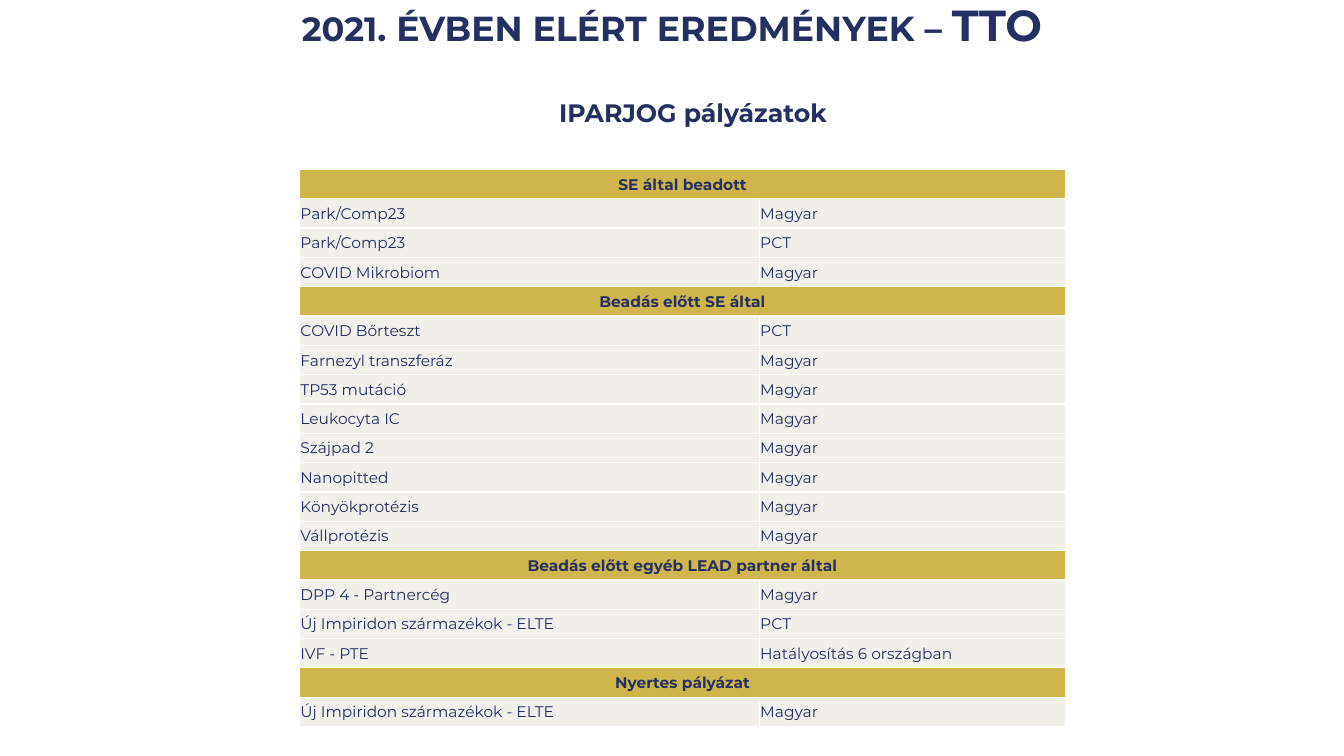
from lxml import etree
from pptx import Presentation
from pptx.dml.color import RGBColor
from pptx.enum.text import MSO_ANCHOR, MSO_AUTO_SIZE, PP_ALIGN
from pptx.oxml.ns import qn
from pptx.util import Inches, Pt

CENTER = PP_ALIGN.CENTER
MIDDLE = MSO_ANCHOR.MIDDLE
NO_AUTOFIT = MSO_AUTO_SIZE.NONE
GROW = MSO_AUTO_SIZE.SHAPE_TO_FIT_TEXT

NAVY = RGBColor(0x24, 0x2F, 0x62)
GOLD = RGBColor(0xCF, 0xB6, 0x4C)
CREAM = RGBColor(0xF2, 0xF0, 0xEB)
WHITE = RGBColor(0xFF, 0xFF, 0xFF)
FONT = "Montserrat"
TITLE_ONLY = 5

SECTIONS = [
    ("SE által beadott", [
        ("Park/Comp23", "Magyar"),
        ("Park/Comp23", "PCT"),
        ("COVID Mikrobiom", "Magyar"),
    ]),
    ("Beadás előtt SE által", [
        ("COVID Bőrteszt", "PCT"),
        ("Farnezyl transzferáz", "Magyar"),
        ("TP53 mutáció", "Magyar"),
        ("Leukocyta IC", "Magyar"),
        ("Szájpad 2", "Magyar"),
        ("Nanopitted", "Magyar"),
        ("Könyökprotézis", "Magyar"),
        ("Vállprotézis", "Magyar"),
    ]),
    ("Beadás előtt egyéb LEAD partner által", [
        ("DPP 4 - Partnercég", "Magyar"),
        ("Új Impiridon származékok - ELTE", "PCT"),
        ("IVF - PTE", "Hatályosítás 6 országban"),
    ]),
    ("Nyertes pályázat", [
        ("Új Impiridon származékok - ELTE", "Magyar"),
    ]),
]


def style_run(run, size, bold):
    run.font.name = FONT
    run.font.size = Pt(size)
    run.font.bold = bold
    run.font.color.rgb = NAVY


def add_title(slide, left, top, width, height):
    title = slide.shapes.title
    title.left, title.top = Inches(left), Inches(top)
    title.width, title.height = Inches(width), Inches(height)
    frame = title.text_frame
    frame.auto_size = NO_AUTOFIT
    frame.vertical_anchor = MIDDLE
    heading = frame.paragraphs[0]
    heading.alignment = CENTER
    heading.line_spacing = 0.9
    for wording, size in (("2021", 30), (". évben elért eredmények – TTO", 31)):
        run = heading.add_run()
        run.text = wording
        style_run(run, size, True)
        run.font._element.set("cap", "small")


def add_subtitle(slide, left, top, width, height):
    subtitle = slide.shapes.add_textbox(
        Inches(left), Inches(top), Inches(width), Inches(height))
    frame = subtitle.text_frame
    frame.text = "IPARJOG pályázatok"
    frame.word_wrap = False
    frame.auto_size = GROW
    frame.paragraphs[0].alignment = CENTER
    style_run(frame.paragraphs[0].runs[0], 18, True)


def add_borders(cell):
    properties = cell._tc.get_or_add_tcPr()
    for position, side in enumerate(("a:lnL", "a:lnR", "a:lnT", "a:lnB")):
        border = etree.Element(qn(side), w=str(Pt(1)))
        fill = etree.SubElement(border, qn("a:solidFill"))
        etree.SubElement(fill, qn("a:srgbClr"), val=str(WHITE))
        properties.insert(position, border)


def format_cell(cell, wording, is_header):
    cell.text = wording
    cell.vertical_anchor = MIDDLE
    cell.margin_left = cell.margin_right = cell.margin_top = Inches(0.01)
    cell.margin_bottom = 0
    cell.fill.solid()
    cell.fill.fore_color.rgb = GOLD if is_header else CREAM
    add_borders(cell)
    paragraph = cell.text_frame.paragraphs[0]
    if is_header:
        paragraph.alignment = CENTER
    for run in paragraph.runs:
        style_run(run, 11, is_header)


def add_applications(slide, left, top, width, height):
    rows = []
    for heading, applications in SECTIONS:
        rows.append((heading, ""))
        rows.extend(applications)
    table = slide.shapes.add_table(
        len(rows), 2, Inches(left), Inches(top), Inches(width), Inches(height)).table
    table.first_row = False
    table.horz_banding = False
    name_width = 0.6 * width
    table.columns[0].width = Inches(name_width)
    table.columns[1].width = Inches(width - name_width)
    for index, wordings in enumerate(rows):
        table.rows[index].height = Inches(height / len(rows))
        is_header = not wordings[1]
        for column, wording in enumerate(wordings):
            format_cell(table.cell(index, column), wording, is_header)
        if is_header:
            table.cell(index, 0).merge(table.cell(index, 1))


def main():
    presentation = Presentation()
    presentation.slide_width = Inches(13.33)
    presentation.slide_height = Inches(7.5)
    slide = presentation.slides.add_slide(presentation.slide_layouts[TITLE_ONLY])
    add_title(slide, 0, 0, 13.33, 0.54)
    add_applications(slide, 2.97, 1.68, 7.6, 5.53)
    add_subtitle(slide, 5.42, 0.92, 2.91, 0.4)
    presentation.save("out.pptx")


if __name__ == "__main__":
    main()
